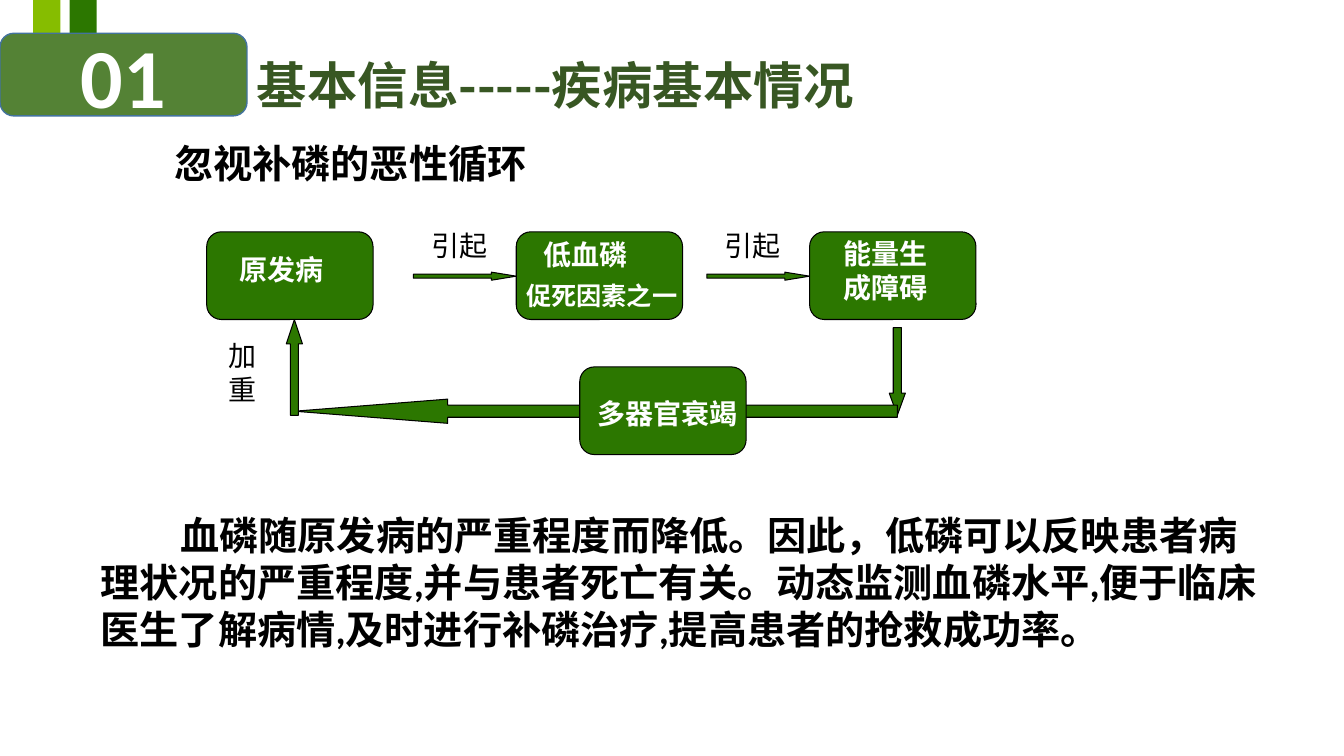
from pptx import Presentation
from pptx.dml.color import RGBColor
from pptx.enum.shapes import MSO_SHAPE
from pptx.enum.text import MSO_ANCHOR, PP_ALIGN
from pptx.oxml.ns import qn
from pptx.util import Pt

PX = 9144  # 100 px to the inch
RECT, ROUNDED = MSO_SHAPE.RECTANGLE, MSO_SHAPE.ROUNDED_RECTANGLE
BADGE = MSO_SHAPE.FLOWCHART_ALTERNATE_PROCESS
RIGHT, LEFT = MSO_SHAPE.RIGHT_ARROW, MSO_SHAPE.LEFT_ARROW
UP, DOWN = MSO_SHAPE.UP_ARROW, MSO_SHAPE.DOWN_ARROW
MIDDLE, CENTER = MSO_ANCHOR.MIDDLE, PP_ALIGN.CENTER
CJK, LATIN = "Noto Sans CJK SC", "Calibri"
COLORS = {
    "green": "2C7700", "lime": "86BD00", "badge": "548235",
    "badge_edge": "43739E", "title": "385723",
    "black": "000000", "white": "FFFFFF",
}
NODE_W, NODE_H = 165, 87

prs = Presentation()
prs.slide_width, prs.slide_height = 1333 * PX, 750 * PX
slide = prs.slides.add_slide(prs.slide_layouts[6])


def add_block(kind, box, fill="green", edge="black", edge_pt=0.75, adjust=()):
    """Add a filled preset shape; edge=None leaves it without a line."""
    block = slide.shapes.add_shape(kind, *(n * PX for n in box))
    block.shadow.inherit = False
    block.fill.solid()
    block.fill.fore_color.rgb = RGBColor.from_string(COLORS[fill])
    if edge:
        block.line.color.rgb = RGBColor.from_string(COLORS[edge])
        block.line.width = Pt(edge_pt)
    else:
        block.line.fill.background()
    for i, value in enumerate(adjust):
        block.adjustments[i] = value
    return block


def write(text, box=None, holder=None, size=20, color="white", bold=True,
          font=CJK, wrap=True, spacing=None, indent=0):
    """Write text into holder, or into a new text box at box."""
    holder = holder or slide.shapes.add_textbox(*(n * PX for n in box))
    frame = holder.text_frame
    frame.word_wrap = wrap
    paragraph = frame.paragraphs[0]
    if spacing:
        paragraph.line_spacing = spacing
    if indent:
        paragraph._p.get_or_add_pPr().set("indent", str(indent * PX))
    run = paragraph.add_run()
    run.text = text
    run.font.size, run.font.bold, run.font.name = Pt(size), bold, font
    run.font.color.rgb = RGBColor.from_string(COLORS[color])
    east_asian = run._r.get_or_add_rPr().makeelement(qn("a:ea"), {"typeface": CJK})
    run.font._element.find(qn("a:latin")).addnext(east_asian)
    return paragraph


# Header
add_block(RECT, (69, 0, 27, 76), edge=None)
add_block(RECT, (33, 0, 27, 50), fill="lime", edge=None)
badge = add_block(BADGE, (0, 33, 245, 82), fill="badge", edge="badge_edge", edge_pt=1)
badge.text_frame.vertical_anchor = MIDDLE
write("01", holder=badge, size=60, font=LATIN).alignment = CENTER
write("基本信息-----疾病基本情况", (245, 49, 888, 71), size=36, color="title")
write("忽视补磷的恶性循环", (163, 139, 370, 52), size=28, color="black",
      wrap=False, spacing=0.9)

# Arrows of the cycle: kind, box, head length relative to thickness
for kind, box, head in [
    (RIGHT, (410, 270, 102, 8), 3.07),
    (RIGHT, (701, 270, 102, 8), 3.07),
    (DOWN, (882, 325, 16, 87), 1.37),
    (LEFT, (292, 396, 598, 24), 6.33),
    (UP, (284, 317, 16, 95), 1.51),
]:
    add_block(kind, box, adjust=(0.5, head))

# Stages of the cycle, over the arrows
for left, top in [(205, 230), (512, 230), (803, 230), (575, 364)]:
    add_block(ROUNDED, (left, top, NODE_W, NODE_H), adjust=(0.167,))

for stage, box, size in [
    ("原发病", (228, 246, 118, 43), 20),
    ("低血磷", (529, 231, 118, 43), 20),
    ("促死因素之一", (512, 273, 189, 40), 18),
    ("能量生成障碍", (827, 230, 118, 77), 20),
    ("多器官衰竭", (583, 388, 173, 43), 20),
]:
    write(stage, box, size=size)

for effect, box in [
    ("引起", (418, 222, 96, 44)),
    ("引起", (709, 222, 103, 44)),
    ("加重", (217, 331, 70, 77)),
]:
    write(effect, box, color="black", bold=False, font=LATIN)

# Conclusion
write("血磷随原发病的严重程度而降低。因此，低磷可以反映患者病理状况的严重程度,"
      "并与患者死亡有关。动态监测血磷水平,便于临床医生了解病情,及时进行补磷治疗,"
      "提高患者的抢救成功率。",
      (90, 502, 1182, 151), size=28, color="black", font=LATIN, indent=79)

prs.save("out.pptx")
